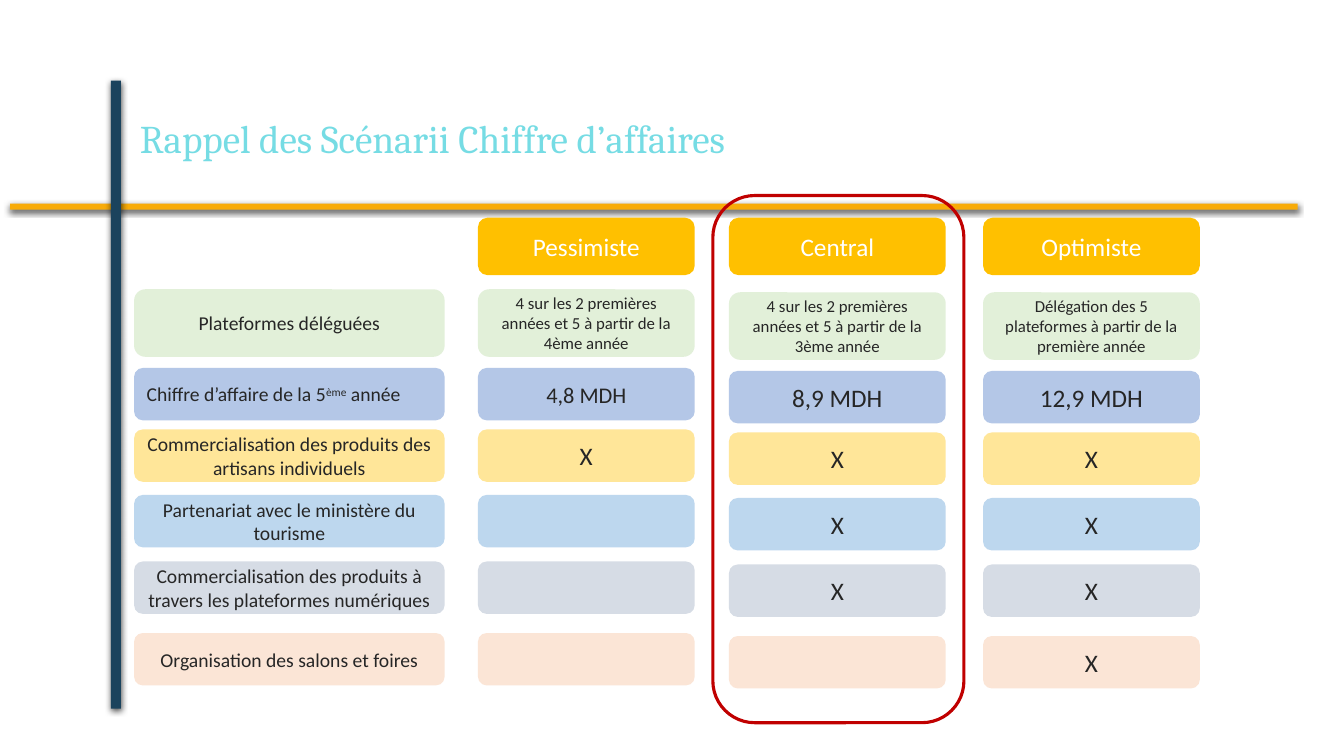
import pptx
import pptx.dml.color
import pptx.enum.shapes
import pptx.enum.text
import pptx.oxml
import pptx.oxml.ns
import pptx.util

Inches = pptx.util.Inches
Pt = pptx.util.Pt
SHAPE = pptx.enum.shapes.MSO_SHAPE
ALIGN = pptx.enum.text.PP_ALIGN
MIDDLE = pptx.enum.text.MSO_ANCHOR.MIDDLE

COLOURS = {
    "bar": "F8AB08", "rail": "1B435D", "title": "76DCE4", "header": "FFC000",
    "white": "FFFFFF", "ink": "262626", "frame": "C00000",
    "green": "E2F0D9", "blue": "B4C7E7", "yellow": "FFE699",
    "sky": "BDD7EE", "grey": "D6DCE5", "peach": "FBE5D6",
}

LABEL_LEFT, LABEL_WIDTH = 1.33, 3.08
SCENARIO_WIDTH = 2.15
HEADER_TOP, HEADER_HEIGHT = 2.16, 0.57
# Name, left edge, downward shift of the cells
SCENARIOS = [("Pessimiste", 4.74, 0), ("Central", 7.23, 0.03), ("Optimiste", 9.75, 0.03)]

# Top, height, colour, label, values by scenario, value sizes
ROWS = [
    (2.87, 0.67, "green", "Plateformes déléguées",
     ["4 sur les 2 premières années et 5 à partir de la 4ème année",
      "4 sur les 2 premières années et 5 à partir de la 3ème année",
      "Délégation des 5 plateformes à partir de la première année"], [12, 12, 12]),
    (3.65, 0.52, "blue", None, ["4,8 MDH", "8,9 MDH", "12,9 MDH"], [16, 18, 18]),
    (4.26, 0.52, "yellow", "Commercialisation des produits des artisans individuels",
     ["X", "X", "X"], [18, 18, 18]),
    (4.91, 0.52, "sky", "Partenariat avec le ministère du tourisme",
     ["", "X", "X"], [18, 18, 18]),
    (5.57, 0.52, "grey", "Commercialisation des produits à travers les plateformes numériques",
     ["", "X", "X"], [18, 18, 18]),
    (6.28, 0.52, "peach", "Organisation des salons et foires",
     ["", "", "X"], [18, 18, 18]),
]


def rgb(name):
    return pptx.dml.color.RGBColor.from_string(COLOURS[name])


def style_font(font, size, colour, name="Calibri"):
    font.size = Pt(size)
    font.name = name
    font.color.rgb = rgb(colour)


def add_block(page, kind, left, top, width, height, fill):
    box = page.shapes.add_shape(kind, Inches(left), Inches(top), Inches(width), Inches(height))
    box.shadow.inherit = False
    box.fill.solid()
    box.fill.fore_color.rgb = rgb(fill)
    box.line.fill.background()
    return box


def add_bar(page, left, top, width, height, fill):
    box = add_block(page, SHAPE.RECTANGLE, left, top, width, height, fill)
    effects = box._element.spPr.find(pptx.oxml.ns.qn("a:effectLst"))
    effects.append(pptx.oxml.parse_xml(
        f'<a:outerShdw {pptx.oxml.ns.nsdecls("a")} blurRad="{Pt(4.5)}" dist="{Pt(1.5)}" '
        'dir="5400000" algn="ctr" rotWithShape="0">'
        '<a:srgbClr val="000000"><a:alpha val="63000"/></a:srgbClr></a:outerShdw>'))


def add_cell(page, left, top, width, height, fill, text, size, colour="ink"):
    box = add_block(page, SHAPE.ROUNDED_RECTANGLE, left, top, width, height, fill)
    frame = box.text_frame
    frame.word_wrap = True
    frame.vertical_anchor = MIDDLE
    para = frame.paragraphs[0]
    para.alignment = ALIGN.CENTER
    if text:
        para.text = text
        style_font(para.runs[0].font, size, colour)
    return para


def add_title(page, text):
    box = page.shapes.add_textbox(Inches(1.29), Inches(0.8), Inches(11.5), Inches(1.2))
    frame = box.text_frame
    frame.word_wrap = True
    frame.vertical_anchor = MIDDLE
    para = frame.paragraphs[0]
    para.text = text
    para.line_spacing = 0.9
    style_font(para.runs[0].font, 28, "title", "Cambria")


def fill_revenue_label(para):
    para.alignment = ALIGN.LEFT
    for text, baseline in [("Chiffre d’affaire de la 5", 0), ("ème", 30000), (" année", 0)]:
        span = para.add_run()
        span.text = text
        style_font(span.font, 14, "ink")
        if baseline:
            span._r.get_or_add_rPr().set("baseline", str(baseline))


def add_highlight(page, left, top, width, height):
    box = page.shapes.add_shape(SHAPE.ROUNDED_RECTANGLE, Inches(left), Inches(top),
                                Inches(width), Inches(height))
    box.shadow.inherit = False
    box.fill.background()
    box.line.color.rgb = rgb("frame")
    box.line.width = Pt(2.25)


def main():
    deck = pptx.Presentation()
    deck.slide_width, deck.slide_height = Inches(13.33), Inches(7.5)
    page = deck.slides.add_slide(deck.slide_layouts[6])

    # Crossing bars and title
    add_bar(page, 0.1, 2.02, 12.77, 0.06, "bar")
    add_bar(page, 1.1, 0.8, 0.1, 6.23, "rail")
    add_title(page, "Rappel des Scénarii Chiffre d’affaires")

    # Scenario headers
    for name, left, _ in SCENARIOS:
        add_cell(page, left, HEADER_TOP, SCENARIO_WIDTH, HEADER_HEIGHT, "header", name, 18, "white")

    # Criteria rows
    for top, height, fill, label, values, sizes in ROWS:
        para = add_cell(page, LABEL_LEFT, top, LABEL_WIDTH, height, fill, label, 14)
        if label is None:
            fill_revenue_label(para)
        for (_, left, shift), value, size in zip(SCENARIOS, values, sizes):
            add_cell(page, left, top + shift, SCENARIO_WIDTH, height, fill, value, size)

    # Frame around the central scenario
    add_highlight(page, 7.07, 1.94, 2.49, 5.23)

    deck.save("out.pptx")


if __name__ == "__main__":
    main()
